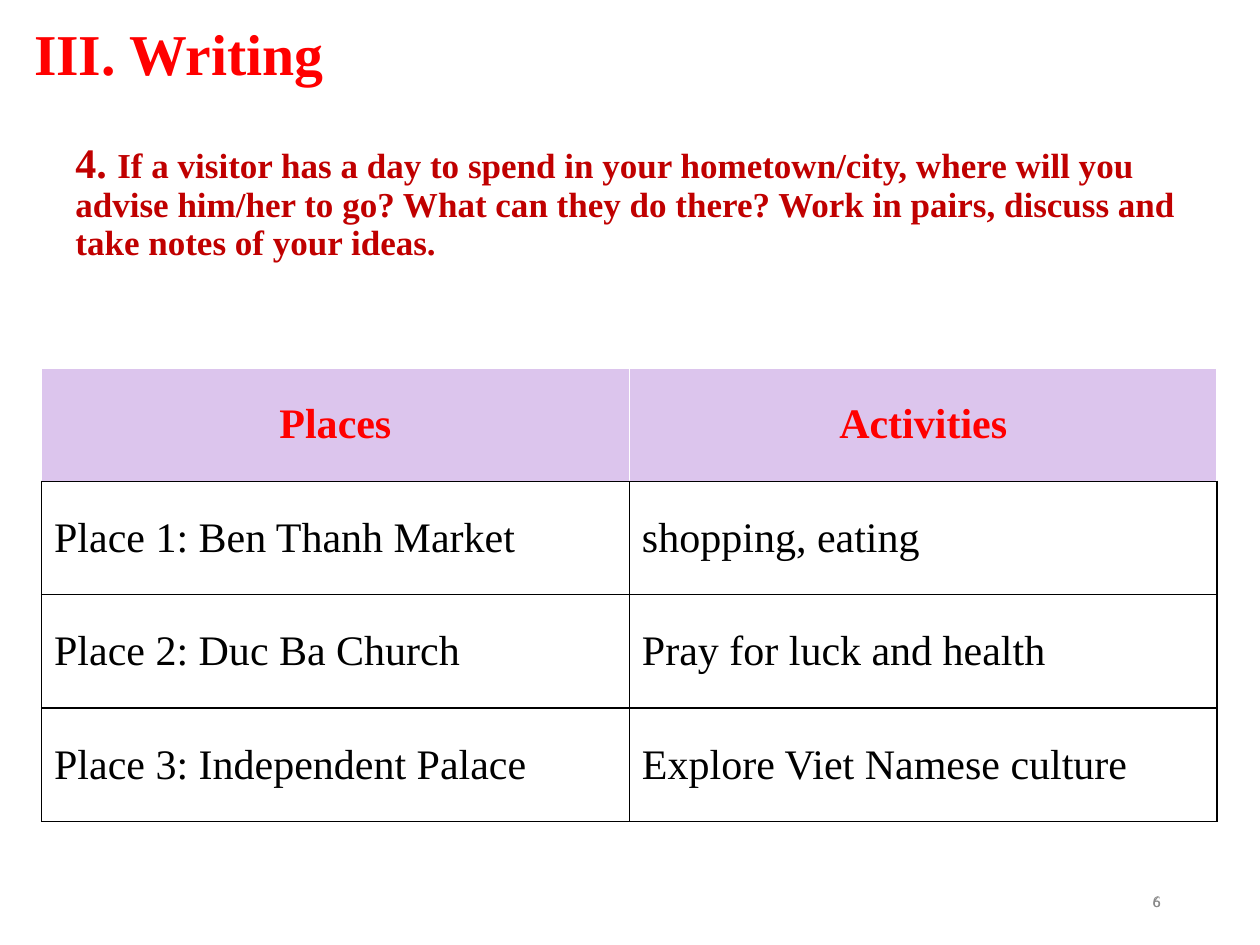
from lxml.etree import SubElement
from pptx import Presentation
from pptx.dml.color import RGBColor
from pptx.enum.text import MSO_ANCHOR as Anchor, PP_ALIGN as Align
from pptx.oxml.ns import qn
from pptx.util import Inches, Pt

SERIF = "Times New Roman"
COLORS = {
    "heading": "FF0000", "task": "C00000", "body": "000000",
    "header_fill": "DCC5ED", "cell_fill": "FFFFFF",
    "header_line": "FFFFFF", "line": "000000",
    "number": "8C8C8C", "number_top": "898989",
}

# Content
TITLE = "III. Writing"
TASK = [
    ("4. ", 24),
    ("If a visitor has a day to spend in your hometown/city, where will you "
     "advise him/her to go? What can they do there? Work in pairs, discuss "
     "and take notes of your ideas.", 20),
]
PLANS = [
    ("Places", "Activities"),
    ("Place 1: Ben Thanh Market", "shopping, eating"),
    ("Place 2: Duc Ba Church", "Pray for luck and health"),
    ("Place 3: Independent Palace", "Explore Viet Namese culture"),
]
PAGE_NUMBER = "6"
NUMBER_LAYERS = [("Calibri", "number"), (SERIF, "number_top")]


def style(run, size, color, bold=False, font=SERIF):
    run.font.name = font
    run.font.size = Pt(size)
    run.font.bold = bold
    run.font.color.rgb = RGBColor.from_string(COLORS[color])


def add_box(left, top, width, height):
    box = slide.shapes.add_textbox(*map(Inches, (left, top, width, height)))
    box.text_frame.word_wrap = True
    return box.text_frame


def set_borders(cell, is_header):
    for side in ("lnL", "lnR", "lnT", "lnB"):
        white = is_header and side != "lnB"
        line = SubElement(cell._tc.get_or_add_tcPr(), qn(f"a:{side}"), w=str(Pt(1)))
        fill = SubElement(line, qn("a:solidFill"))
        SubElement(fill, qn("a:srgbClr"),
                   val=COLORS["header_line" if white else "line"])


prs = Presentation()
prs.slide_width, prs.slide_height = Inches(10), Inches(7.5)
slide = prs.slides.add_slide(prs.slide_layouts[5])

# Title
title = slide.shapes.title
title.left, title.top = Inches(0.17), Inches(0.15)
title.width, title.height = Inches(9), Inches(0.9)
title.text_frame.text = TITLE
title.text_frame.vertical_anchor = Anchor.TOP
heading = title.text_frame.paragraphs[0]
heading.alignment = Align.LEFT
heading.line_spacing = 0.9
style(heading.runs[0], 33, "heading", bold=True)

# Task
task = add_box(0.5, 1.08, 9, 5.62).paragraphs[0]
task.line_spacing = 0.9
for words, size in TASK:
    run = task.add_run()
    run.text = words
    style(run, size, "task", bold=True)

# Page number
for font, color in NUMBER_LAYERS:
    frame = add_box(7.06, 6.95, 2.25, 0.4)
    frame.text = PAGE_NUMBER
    frame.vertical_anchor = Anchor.MIDDLE
    frame.paragraphs[0].alignment = Align.RIGHT
    style(frame.paragraphs[0].runs[0], 9, color, font=font)

# Places and activities
table = slide.shapes.add_table(
    len(PLANS), len(PLANS[0]),
    Inches(0.33), Inches(2.92), Inches(9.33), Inches(3.6)).table
for r, plan in enumerate(PLANS):
    is_header = r == 0
    for c, words in enumerate(plan):
        cell = table.cell(r, c)
        cell.text_frame.text = words
        cell.vertical_anchor = Anchor.MIDDLE
        set_borders(cell, is_header)
        cell.fill.solid()
        cell.fill.fore_color.rgb = RGBColor.from_string(
            COLORS["header_fill" if is_header else "cell_fill"])
        entry = cell.text_frame.paragraphs[0]
        entry.alignment = Align.CENTER if is_header else Align.LEFT
        style(entry.runs[0], 24, "heading" if is_header else "body", bold=is_header)

prs.save("out.pptx")
